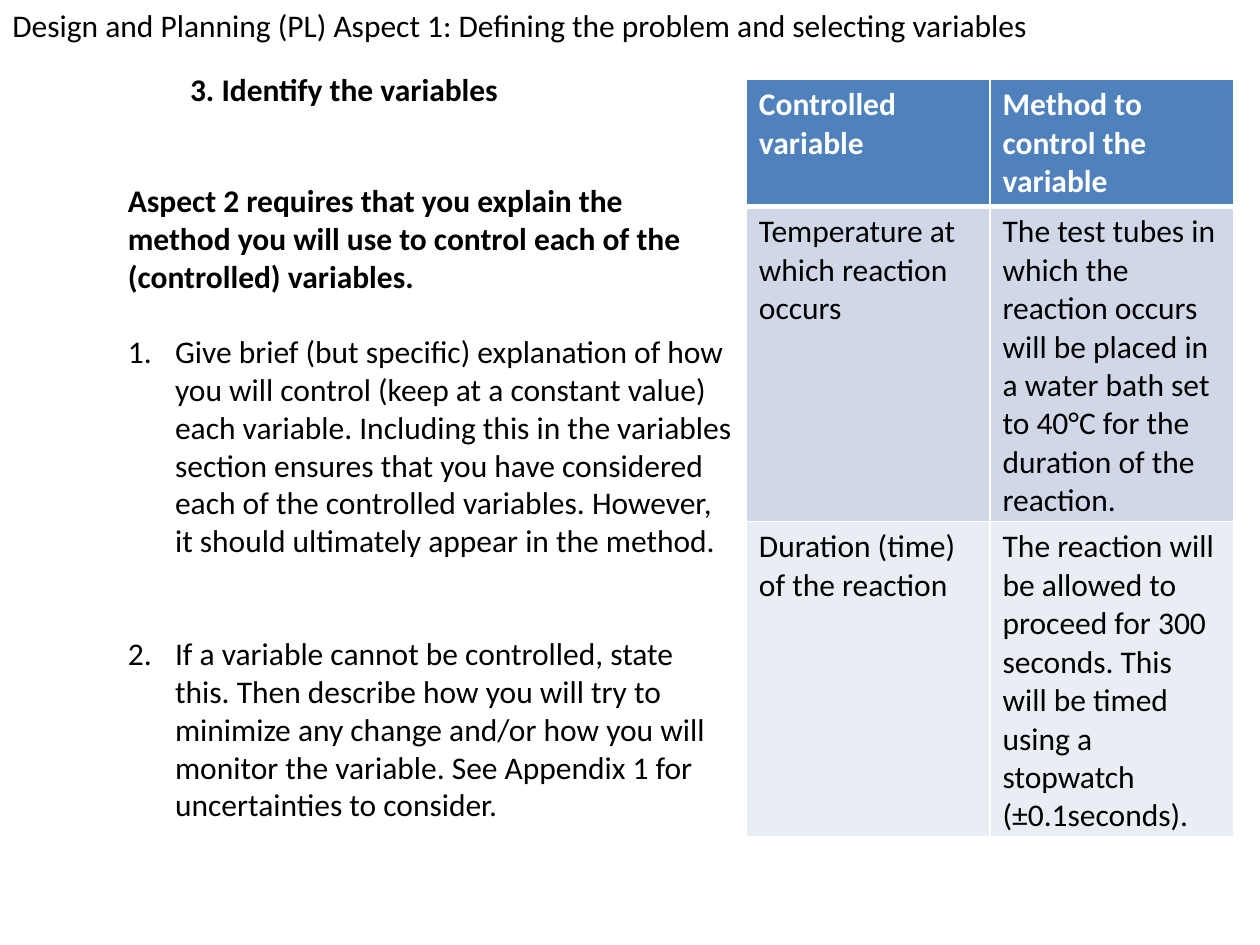
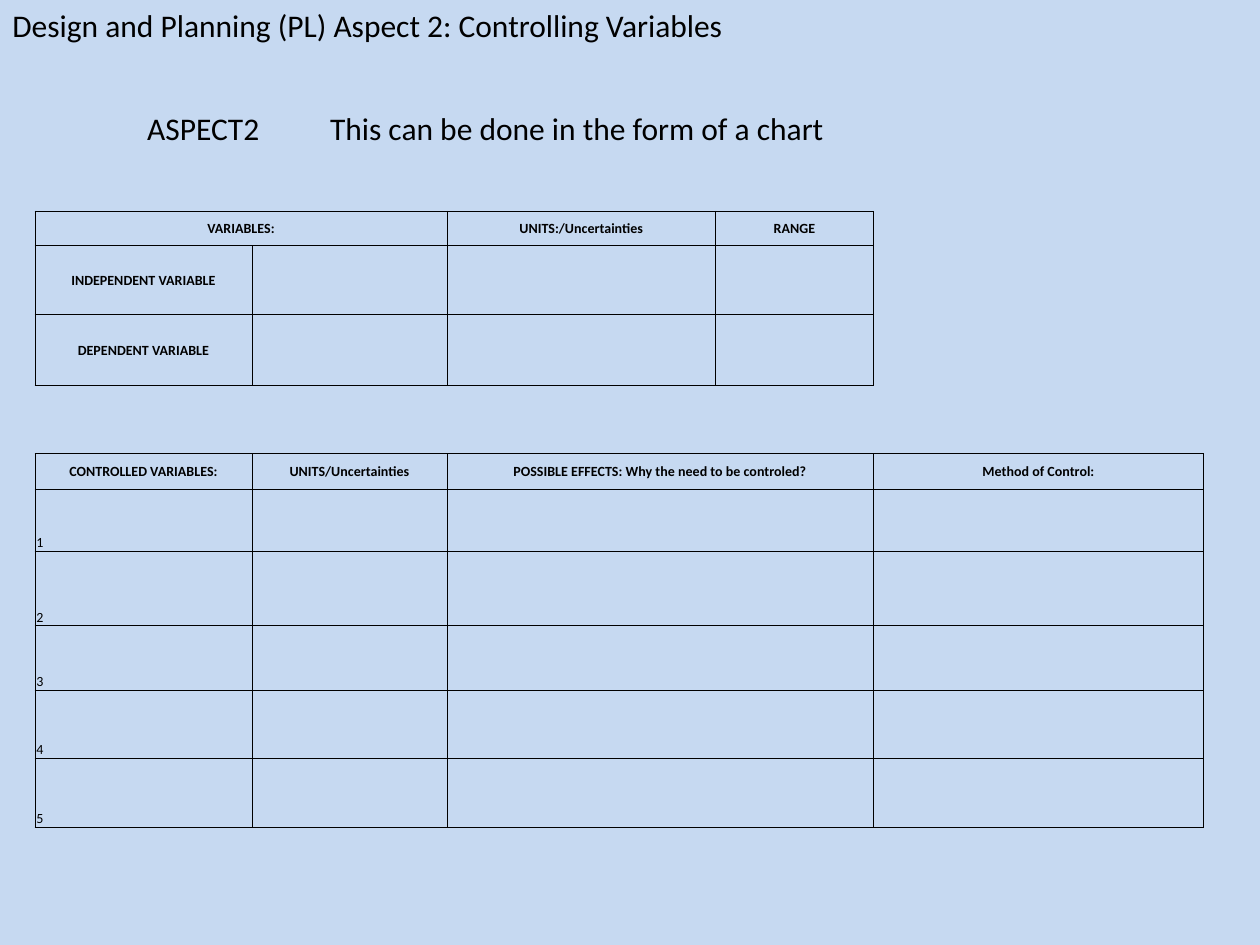
from dataclasses import dataclass

from lxml.etree import SubElement
from pptx import Presentation
from pptx.dml.color import RGBColor
from pptx.enum.text import MSO_ANCHOR as ANCHOR, MSO_AUTO_SIZE as FIT, PP_ALIGN as ALIGN
from pptx.oxml.ns import qn
from pptx.util import Pt


@dataclass(frozen=True)
class Theme:
    font: str = "Calibri"
    body: float = 18
    small: float = 8
    line: float = 21.5  # height of one line of body text
    ink: str = "000000"
    paper: str = "FFFFFF"
    sky: str = "C6D9F1"
    header: str = "4F81BD"
    bands: tuple = ("D0D8E8", "E9EDF4")
    no_grid: str = "{2D5ABB26-0587-4C30-8999-92F81FD0307C}"


T = Theme()

TITLES = [
    ("Design and Planning (PL) Aspect 1: Defining the problem and selecting variables", 602),
    ("Design and Planning (PL) Aspect 2: Controlling Variables", 425.5),
]

STEP = "3. Identify the variables"
REQUIREMENT = ("Aspect 2 requires that you explain the method you will use to control each "
               "of the (controlled) variables.")
# (text, blank lines above)
INSTRUCTIONS = [
    ("Give brief (but specific) explanation of how you will control (keep at a constant value) "
     "each variable. Including this in the variables section ensures that you have considered "
     "each of the controlled variables. However, it should ultimately appear in the method.", 1),
    ("If a variable cannot be controlled, state this. Then describe how you will try to minimize "
     "any change and/or how you will monitor the variable. See Appendix 1 for uncertainties to "
     "consider.", 2),
]
METHODS = [
    ("Controlled variable", "Method to control the variable"),
    ("Temperature at which reaction occurs",
     "The test tubes in which the reaction occurs will be placed in a water bath set to 40°C "
     "for the duration of the reaction."),
    ("Duration (time) of the reaction",
     "The reaction will be allowed to proceed for 300 seconds. This will be timed using a "
     "stopwatch (±0.1seconds)."),
]
METHOD_COLS = [139.25, 139.25]
METHOD_ROWS = [72.5, 180, 180]

FORM_INTRO = "ASPECT2\tThis can be done in the form of a chart"
FORM_COLS = [124, 111.5, 106.5, 47, 90, 47.25, 47.25, 47.25, 47.25]
VARIABLE_SPANS = (1, 1, 2, 1)
CONTROL_SPANS = (1, 1, 3, 4)
# (row height, column spans, texts from the left)
FORM = [
    (19.5, (2, 2, 1), ["VARIABLES:", "UNITS:/Uncertainties", "RANGE"]),
    (39.5, VARIABLE_SPANS, ["INDEPENDENT VARIABLE"]),
    (40.5, VARIABLE_SPANS, ["DEPENDENT VARIABLE"]),
    (19.5, (), []),
    (19.5, (), []),
    (20.5, CONTROL_SPANS, ["CONTROLLED VARIABLES:", "UNITS/Uncertainties",
                           "POSSIBLE EFFECTS: Why the need to be controled?",
                           "Method of Control:"]),
    (35.5, CONTROL_SPANS, ["1"]),
    (42.5, CONTROL_SPANS, ["2"]),
    (37, CONTROL_SPANS, ["3"]),
    (38.5, CONTROL_SPANS, ["4"]),
    (39.5, CONTROL_SPANS, ["5"]),
]


def rgb(color):
    return RGBColor.from_string(color)


def write(p, text, size=T.body, bold=False, color=T.ink, align=ALIGN.LEFT,
          before=0, numbered=False, tab=None):
    """Fill a paragraph; an empty text only sets the size of its line."""
    p.alignment = align
    p.space_before = Pt(before)
    pr = p._p.get_or_add_pPr()
    if numbered:
        pr.set("marL", str(Pt(27)))
        pr.set("indent", str(-Pt(27)))
        SubElement(pr, qn("a:buFont"), typeface="+mj-lt")
        SubElement(pr, qn("a:buAutoNum"), type="arabicPeriod")
    if tab:
        SubElement(SubElement(pr, qn("a:tabLst")), qn("a:tab"), pos=str(Pt(tab)), algn="l")
    if not text:
        SubElement(p._p, qn("a:endParaRPr"), sz=str(int(size * 100)))
        return
    r = p.add_run()
    r.text = text
    r.font.name, r.font.size, r.font.bold = T.font, Pt(size), bold
    r.font.color.rgb = rgb(color)


def add_box(s, x, y, w, h=29, wrap=False):
    tf = s.shapes.add_textbox(Pt(x), Pt(y), Pt(w), Pt(h)).text_frame
    tf.word_wrap = wrap
    tf.auto_size = FIT.SHAPE_TO_FIT_TEXT
    return tf


def add_grid(s, x, y, widths, heights):
    """Add a table that has neither fills nor lines."""
    table = s.shapes.add_table(len(heights), len(widths), Pt(x), Pt(y),
                               Pt(sum(widths)), Pt(sum(heights))).table
    table._tbl.tblPr.find(qn("a:tableStyleId")).text = T.no_grid
    for col, w in zip(table.columns, widths):
        col.width = Pt(w)
    for row, h in zip(table.rows, heights):
        row.height = Pt(h)
    return table


def frame(cell, color, width, **special):
    """Draw the four borders; special gives other widths by side (L, R, T, B)."""
    for side in "LRTB":
        ln = SubElement(cell._tc.get_or_add_tcPr(), qn("a:ln" + side),
                        w=str(Pt(special.get(side, width))))
        SubElement(SubElement(ln, qn("a:solidFill")), qn("a:srgbClr"), val=color)


def add_slide(prs, title, background):
    s = prs.slides.add_slide(prs.slide_layouts[6])
    s.background.fill.solid()
    s.background.fill.fore_color.rgb = rgb(background)
    text, width = title
    write(add_box(s, 0, 0, width).paragraphs[0], text)
    return s


def build_identify(prs):
    s = add_slide(prs, TITLES[0], T.paper)
    write(add_box(s, 101.5, 36.5, 193).paragraphs[0], STEP, bold=True)

    tf = add_box(s, 66, 100, 360, 378, wrap=True)
    write(tf.paragraphs[0], REQUIREMENT, bold=True)
    for text, blank_lines in INSTRUCTIONS:
        write(tf.add_paragraph(), text, numbered=True, before=blank_lines * T.line)

    table = add_grid(s, 426.5, 45.5, METHOD_COLS, METHOD_ROWS)
    for i, texts in enumerate(METHODS):
        head = i == 0
        for j, text in enumerate(texts):
            cell = table.cell(i, j)
            frame(cell, T.paper, 1, **({"B": 3} if head else {"T": 3} if i == 1 else {}))
            cell.fill.solid()
            cell.fill.fore_color.rgb = rgb(T.header if head else T.bands[(i - 1) % 2])
            write(cell.text_frame.paragraphs[0], text, bold=head,
                  color=T.paper if head else T.ink)


def build_form(prs):
    s = add_slide(prs, TITLES[1], T.sky)
    write(add_box(s, 77, 58.5, 406).paragraphs[0], FORM_INTRO, tab=104.5)

    table = add_grid(s, 20, 120.75, FORM_COLS, [height for height, _, _ in FORM])
    for i, (_, spans, texts) in enumerate(FORM):
        labels = dict(zip((sum(spans[:k]) for k in range(len(spans))), texts))
        for j in range(len(FORM_COLS)):
            cell = table.cell(i, j)
            text = labels.get(j, "")
            number = text.isdigit()
            cell.margin_left = cell.margin_right = cell.margin_top = Pt(0.75)
            cell.margin_bottom = 0
            cell.vertical_anchor = ANCHOR.BOTTOM if number else ANCHOR.MIDDLE
            write(cell.text_frame.paragraphs[0], text, size=T.small, bold=not number,
                  align=ALIGN.LEFT if number else ALIGN.CENTER)
            if j < sum(spans):
                frame(cell, T.ink, 0.5)
        start = 0
        for span in spans:
            if span > 1:
                table.cell(i, start).merge(table.cell(i, start + span - 1))
            start += span


def main():
    prs = Presentation()
    prs.slide_width, prs.slide_height = Pt(720), Pt(540)
    build_identify(prs)
    build_form(prs)
    prs.save("out.pptx")


if __name__ == "__main__":
    main()
